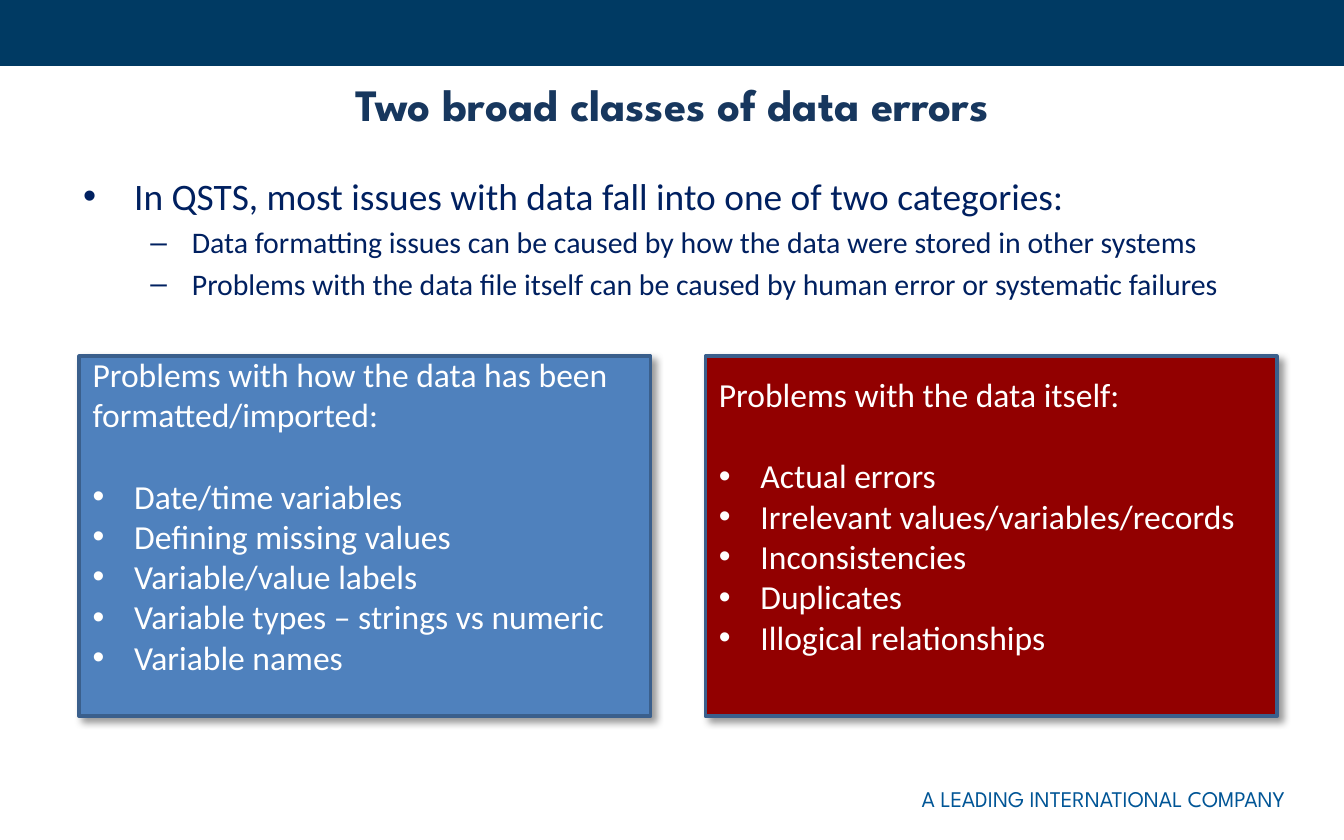
from lxml import etree
from pptx import Presentation
from pptx.dml.color import RGBColor
from pptx.enum.shapes import MSO_SHAPE
from pptx.enum.text import MSO_ANCHOR, PP_ALIGN
from pptx.oxml import parse_xml
from pptx.oxml.ns import nsdecls, qn
from pptx.util import Inches, Pt

COLORS = {
    "band": "003A63", "footer": "005596", "title": "17375E", "body": "002060",
    "format": "4F81BD", "content": "920000", "border": "3A5F8C", "white": "FFFFFF",
}
HEADING_FONT, BODY_FONT = "League Spartan", "Calibri"


class SlideBuilder:
    def __init__(self, slide):
        self.slide = slide

    def rectangle(self, left, top, width, height, fill, border=None):
        shape = self.slide.shapes.add_shape(
            MSO_SHAPE.RECTANGLE, Inches(left), Inches(top), Inches(width), Inches(height))
        shape.shadow.inherit = False
        shape.fill.solid()
        shape.fill.fore_color.rgb = RGBColor.from_string(COLORS[fill])
        if border:
            shape.line.color.rgb = RGBColor.from_string(COLORS[border])
            shape.line.width = Pt(2)
        else:
            shape.line.fill.background()
        return shape

    def text_box(self, left, top, width, height, wrap=True):
        box = self.slide.shapes.add_textbox(
            Inches(left), Inches(top), Inches(width), Inches(height))
        box.text_frame.word_wrap = wrap
        return box.text_frame

    def style(self, paragraph, size, color, font=BODY_FONT, bold=False,
              align=PP_ALIGN.LEFT):
        paragraph.alignment = align
        for run in paragraph.runs:
            run.font.name = font
            run.font.size = Pt(size)
            run.font.bold = bold
            run.font.color.rgb = RGBColor.from_string(COLORS[color])

    def bullet(self, paragraph, mark, margin, hanging):
        properties = paragraph._p.get_or_add_pPr()
        properties.set("marL", str(Inches(margin)))
        properties.set("indent", str(-Inches(hanging)))
        etree.SubElement(properties, qn("a:buFont")).set("typeface", "Arial")
        etree.SubElement(properties, qn("a:buChar")).set("char", mark)

    def drop_shadow(self, shape):
        effects = shape._element.spPr.find(qn("a:effectLst"))
        effects.append(parse_xml(
            f'<a:outerShdw {nsdecls("a")} blurRad="{Pt(4)}" dist="{Pt(3)}" '
            'dir="2700000" algn="tl" rotWithShape="0"><a:srgbClr val="000000">'
            '<a:alpha val="40000"/></a:srgbClr></a:outerShdw>'))

    def problem_card(self, left, fill, heading, problems):
        card = self.rectangle(left, 2.65, 4.25, 2.68, fill, "border")
        self.drop_shadow(card)
        frame = card.text_frame
        frame.word_wrap = True
        frame.vertical_anchor = MSO_ANCHOR.MIDDLE
        frame.margin_bottom = Inches(0.36)  # leaves one line free below the list
        frame.text = "\n".join([heading, *problems])
        for number, paragraph in enumerate(frame.paragraphs):
            if number:
                self.bullet(paragraph, "•", 0.31, 0.31)
            else:
                paragraph.space_after = Pt(22)
            self.style(paragraph, 18, "white")


def main():
    presentation = Presentation()
    presentation.slide_width = Inches(10)
    presentation.slide_height = Inches(6.25)
    builder = SlideBuilder(presentation.slides.add_slide(presentation.slide_layouts[6]))

    # Top band and footer
    builder.rectangle(0, 0, 10, 0.49, "band")
    footer = builder.text_box(6.76, 5.79, 3.16, 0.3, wrap=False)
    footer.text = "A LEADING INTERNATIONAL COMPANY"
    builder.style(footer.paragraphs[0], 12, "footer", HEADING_FONT)

    # Title
    title = builder.text_box(0.5, 0.25, 9, 1.04)
    title.vertical_anchor = MSO_ANCHOR.MIDDLE
    title.text = "Two broad classes of data errors"
    builder.style(title.paragraphs[0], 24, "title", HEADING_FONT, True, PP_ALIGN.CENTER)

    # Introduction
    introduction = builder.text_box(0.52, 1.24, 9, 1.1)
    introduction.text = "\n".join([
        "In QSTS, most issues with data fall into one of two categories:",
        "Data formatting issues can be caused by how the data were stored in other systems",
        "Problems with the data file itself can be caused by human error or systematic failures",
    ])
    lead, *causes = introduction.paragraphs
    builder.bullet(lead, "•", 0.38, 0.38)
    builder.style(lead, 20, "body")
    for cause in causes:
        cause.level = 1
        cause.space_before = Pt(3.2)
        builder.bullet(cause, "–", 0.81, 0.31)
        builder.style(cause, 16, "body")

    # The two classes of problems
    builder.problem_card(
        0.59, "format", "Problems with how the data has been formatted/imported:",
        ["Date/time variables", "Defining missing values", "Variable/value labels",
         "Variable types – strings vs numeric", "Variable names"])
    builder.problem_card(
        5.25, "content", "Problems with the data itself:",
        ["Actual errors", "Irrelevant values/variables/records", "Inconsistencies",
         "Duplicates", "Illogical relationships"])

    presentation.save("out.pptx")


if __name__ == "__main__":
    main()
